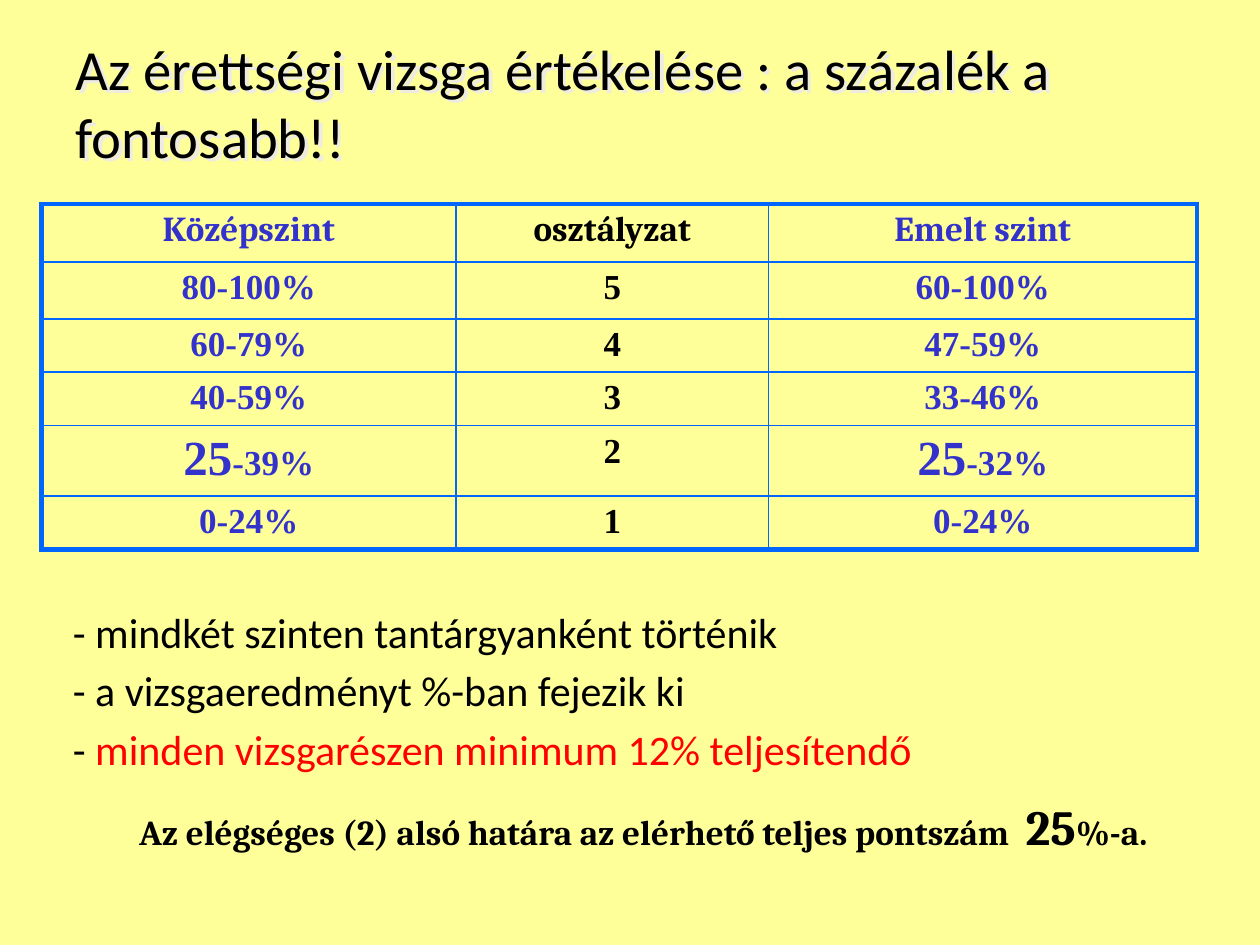
import pptx
import pptx.util
import pptx.dml.color
import pptx.enum.text
import pptx.oxml
import pptx.oxml.ns

Inches, Pt = pptx.util.Inches, pptx.util.Pt
ALIGN, ANCHOR = pptx.enum.text.PP_ALIGN, pptx.enum.text.MSO_ANCHOR
NS = pptx.oxml.ns.nsdecls("a")
BLUE, BLACK, RED, EDGE = "3333CC", "000000", "FF0000", "0066FF"


def color(code):
    return pptx.dml.color.RGBColor.from_string(code)


def add_run(para, text, size, face, code, bold=False):
    run = para.add_run()
    run.text = text
    run.font.color.rgb = color(code)
    look = {"size": Pt(size), "name": face, "bold": bold}
    for key, val in look.items():
        setattr(run.font, key, val)


deck = pptx.Presentation()
deck.slide_width, deck.slide_height = Inches(10), Inches(7.5)
slide = deck.slides.add_slide(deck.slide_layouts[6])
slide.background.fill.solid()
slide.background.fill.fore_color.rgb = color("FFFF99")

places = {
    "title": (0.5, 0.37, 9, 0.87, {"vertical_anchor": ANCHOR.MIDDLE}),
    "list": (0.48, 4.36, 7.45, 1.27, {"margin_top": Inches(0.45)}),
    "limit": (0.49, 6.27, 9.23, 0.55, {}),
}
boxes = {}
for name, (left, top, width, height, extra) in places.items():
    box = slide.shapes.add_textbox(Inches(left), Inches(top), Inches(width), Inches(height))
    boxes[name] = box
    for key, val in {"word_wrap": True, **extra}.items():
        setattr(box.text_frame, key, val)

title = "Az érettségi vizsga értékelése : a százalék a fontosabb!!"
add_run(boxes["title"].text_frame.paragraphs[0], title, 32.4, "Calibri", BLACK)
shade = pptx.oxml.parse_xml(
    f'<a:effectLst {NS}><a:outerShdw dist="{Pt(3)}" dir="2700000">'
    '<a:srgbClr val="EEECE1"/></a:outerShdw></a:effectLst>')
boxes["title"]._element.spPr.append(shade)

rows = [
    ("Középszint", "osztályzat", "Emelt szint"),
    ("80-100%", "5", "60-100%"),
    ("60-79%", "4", "47-59%"),
    ("40-59%", "3", "33-46%"),
    ("25-39%", "2", "25-32%"),
    ("0-24%", "1", "0-24%"),
]
widths = (3.29, 2.48, 3.4)
heights = (0.46, 0.45, 0.42, 0.42, 0.56, 0.42)
holder = slide.shapes.add_table(
    len(rows), len(widths), Inches(0.33), Inches(1.62), Inches(9.17), Inches(2.73))
table = holder.table
for key in ("first_row", "horz_banding"):
    setattr(table, key, False)
for col, width in zip(table.columns, widths):
    col.width = Inches(width)
for row, height in zip(table.rows, heights):
    row.height = Inches(height)

pads = {"margin_left": 0.14, "margin_right": 0.14,
        "margin_top": 0.05, "margin_bottom": 0.04}
for i, texts in enumerate(rows):
    for j, text in enumerate(texts):
        cell = table.cell(i, j)
        for key, val in pads.items():
            setattr(cell, key, Inches(val))
        cell.fill.background()
        outer = {"L": j == 0, "R": j == len(widths) - 1,
                 "T": i == 0, "B": i == len(rows) - 1}
        for k, (side, edge) in enumerate(outer.items()):
            line = pptx.oxml.parse_xml(
                f'<a:ln{side} {NS} w="{Pt(3 if edge else 1)}"><a:solidFill>'
                f'<a:srgbClr val="{EDGE}"/></a:solidFill></a:ln{side}>')
            cell._tc.get_or_add_tcPr().insert(k, line)
        para = cell.text_frame.paragraphs[0]
        para.alignment = ALIGN.CENTER
        face = "Cambria" if i == 0 else "Times New Roman"
        code = BLACK if j == 1 else BLUE
        if text.startswith("25"):
            add_run(para, "25", 28, face, code, True)
            text = text[2:]
        add_run(para, text, 20, face, code, True)

points = [
    [("- mindkét szinten tantárgyanként történik", BLACK)],
    [("- a vizsgaeredményt %-ban fejezik ki", BLACK)],
    [("- ", BLACK), ("minden vizsgarészen minimum 12% teljesítendő", RED)],
]
frame = boxes["list"].text_frame
for i, parts in enumerate(points):
    para = frame.add_paragraph() if i else frame.paragraphs[0]
    para.space_after = Pt(4.8)
    for text, code in parts:
        add_run(para, text, 24, "Calibri", code)

para = boxes["limit"].text_frame.paragraphs[0]
para.alignment = ALIGN.CENTER
limit = "Az elégséges (2) alsó határa az elérhető teljes pontszám  "
for text, size in ((limit, 20), ("25", 28), ("%-a.", 20)):
    add_run(para, text, size, "Cambria", BLACK, True)

deck.save("out.pptx")
